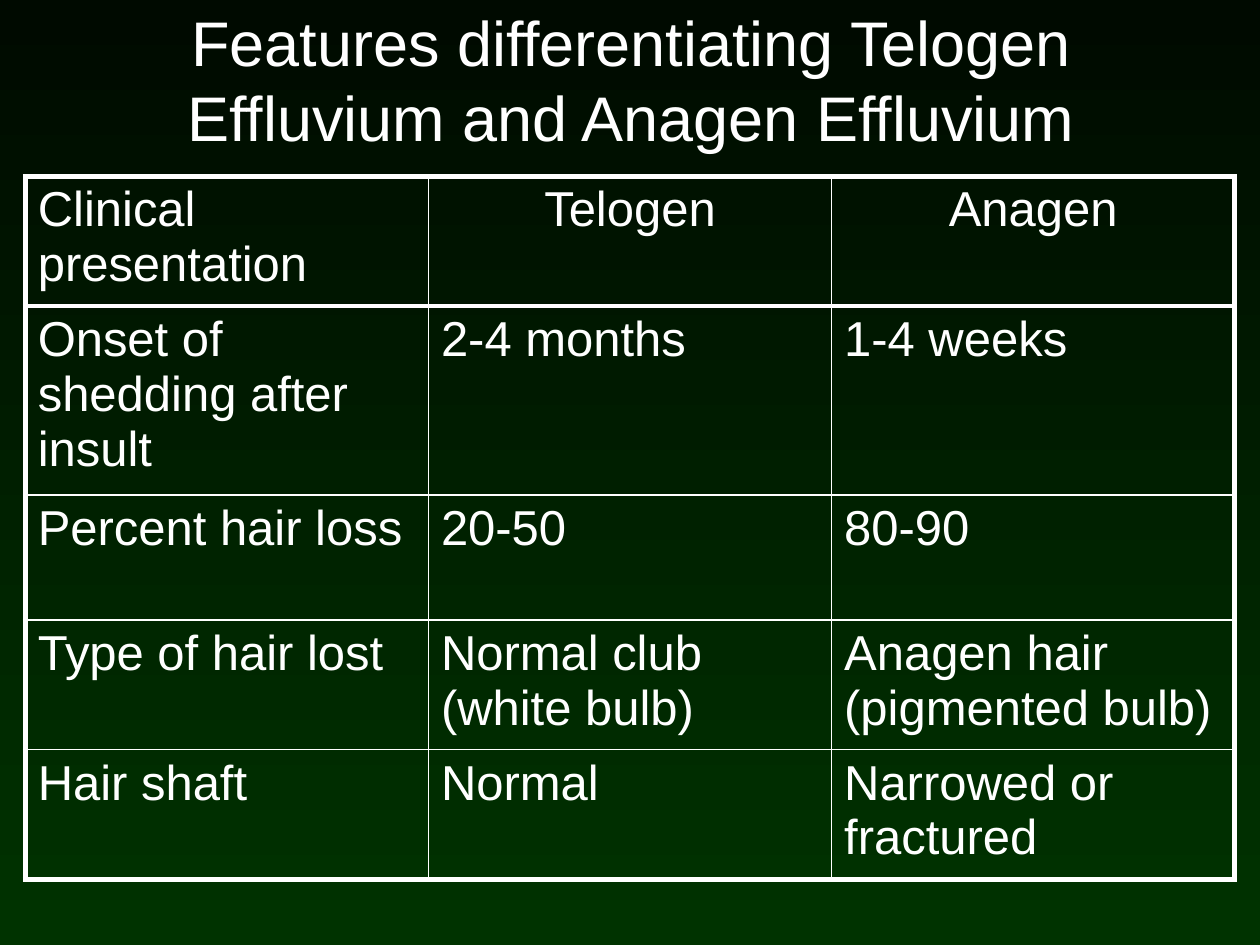
from lxml import etree
from pptx import Presentation
from pptx import util as u
from pptx.dml import color
from pptx.enum import text
from pptx.oxml import ns

WHITE = "FFFFFF"
ROWS = [
    ["Clinical presentation", "Telogen", "Anagen"],
    ["Onset of shedding after insult", "2-4 months", "1-4 weeks"],
    ["Percent hair loss", "20-50", "80-90"],
    ["Type of hair lost", "Normal club (white bulb)", "Anagen hair (pigmented bulb)"],
    ["Hair shaft", "Normal", "Narrowed or fractured"],
]
HEIGHTS = [1.03, 1.5, 0.99, 1.03, 1.03]
THIN, THICK = 1, 3


def rgb(code):
    return color.RGBColor.from_string(code)


def apply(item, values):
    for key, value in values.items():
        setattr(item, key, value)


class Deck:
    face = "Arial"
    ink = WHITE

    def __init__(self, wide, high):
        self.prs = Presentation()
        apply(self.prs, {"slide_width": u.Inches(wide), "slide_height": u.Inches(high)})
        self.slide = self.prs.slides.add_slide(self.prs.slide_layouts[5])

    def ground(self, top, base):
        fill = self.slide.background.fill
        fill.gradient()
        fill.gradient_angle = 270
        for stop, code, place in zip(fill.gradient_stops, (top, base), (0, 1)):
            stop.color.rgb = rgb(code)
            stop.position = place

    def label(self, frame, words, size, align):
        frame.text = words
        para = frame.paragraphs[0]
        para.alignment = align
        font = para.runs[0].font
        apply(font, {"name": self.face, "size": u.Pt(size), "bold": False})
        font.color.rgb = rgb(self.ink)

    def title(self, words, left, top, width, height):
        shape = self.slide.shapes.title
        apply(shape, {"left": u.Inches(left), "top": u.Inches(top),
                      "width": u.Inches(width), "height": u.Inches(height)})
        apply(shape.text_frame, {"word_wrap": True,
                                 "auto_size": text.MSO_AUTO_SIZE.NONE,
                                 "vertical_anchor": text.MSO_ANCHOR.MIDDLE})
        self.label(shape.text_frame, words, 36, text.PP_ALIGN.CENTER)

    def border(self, cell, sides):
        props = cell._tc.get_or_add_tcPr()
        for spot, (side, width) in enumerate(sides.items()):
            line = etree.Element(ns.qn("a:ln" + side), w=str(u.Pt(width)))
            solid = etree.SubElement(line, ns.qn("a:solidFill"))
            etree.SubElement(solid, ns.qn("a:srgbClr"), val=self.ink)
            props.insert(spot, line)

    def table(self, rows, left, top, width, heights):
        count, span = len(rows), len(rows[0])
        grid = self.slide.shapes.add_table(
            count, span, u.Inches(left), u.Inches(top),
            u.Inches(width * span), u.Inches(sum(heights))).table
        apply(grid, {"first_row": False, "horz_banding": False})
        for col in grid.columns:
            col.width = u.Inches(width)
        for r, (row, high) in enumerate(zip(rows, heights)):
            grid.rows[r].height = u.Inches(high)
            for c, words in enumerate(row):
                cell = grid.cell(r, c)
                cell.fill.background()
                head = r == 0 and c > 0
                align = text.PP_ALIGN.CENTER if head else text.PP_ALIGN.LEFT
                self.label(cell.text_frame, words, 28, align)
                self.border(cell, {
                    "L": THICK if c == 0 else THIN,
                    "R": THICK if c == span - 1 else THIN,
                    "T": THICK if r < 2 else THIN,
                    "B": THICK if r in (0, count - 1) else THIN,
                })


def main():
    deck = Deck(10, 7.5)
    deck.ground("000A00", "003300")
    deck.title("Features differentiating Telogen Effluvium and Anagen Effluvium",
               0.51, 0, 9, 1.25)
    deck.table(ROWS, 0.2, 1.4, 3.2, HEIGHTS)
    deck.prs.save("out.pptx")


if __name__ == "__main__":
    main()
